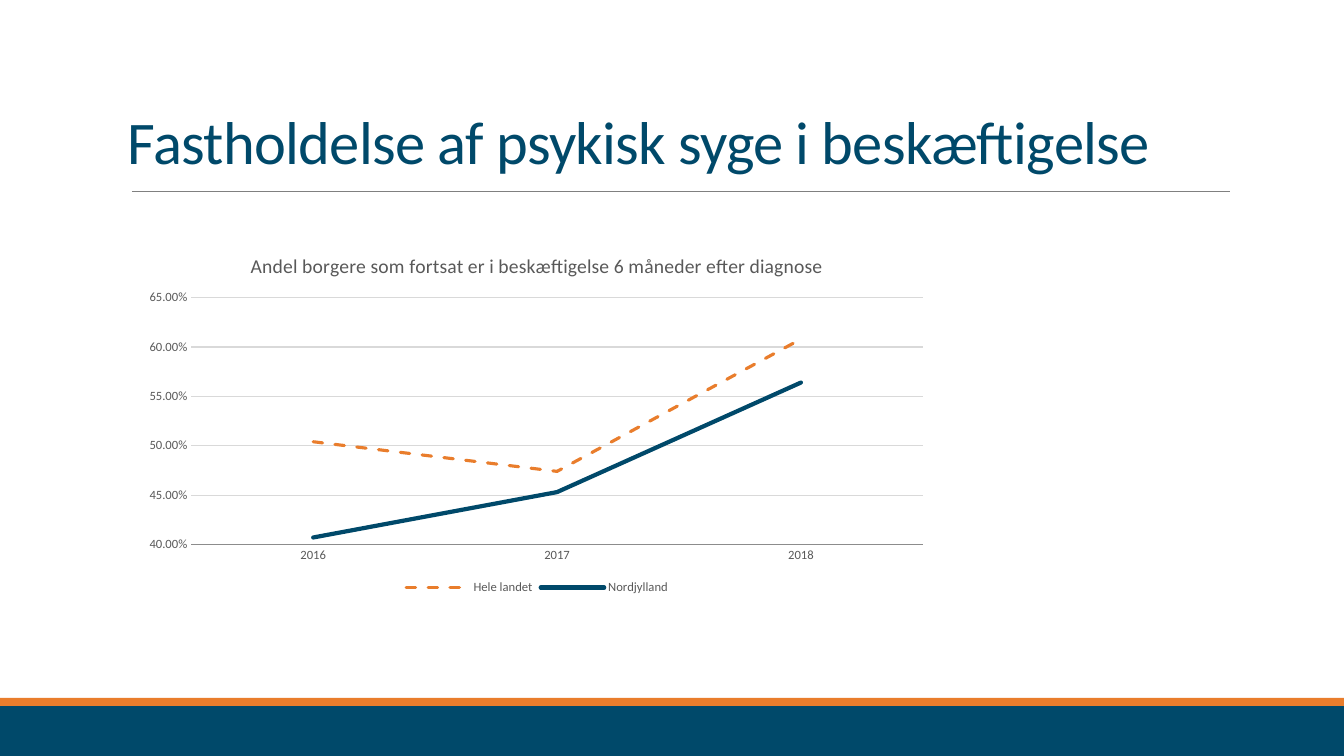
from dataclasses import dataclass

from lxml import etree
from pptx import Presentation
from pptx.chart.data import CategoryChartData
from pptx.dml.color import RGBColor
from pptx.enum.chart import XL_CHART_TYPE, XL_LEGEND_POSITION, XL_MARKER_STYLE, XL_TICK_MARK
from pptx.enum.dml import MSO_LINE
from pptx.enum.shapes import MSO_CONNECTOR, MSO_SHAPE
from pptx.enum.text import MSO_ANCHOR
from pptx.oxml.ns import qn
from pptx.util import Emu, Pt

LINE_CHART = XL_CHART_TYPE.LINE
BOTTOM = XL_LEGEND_POSITION.BOTTOM
NO_MARKER = XL_MARKER_STYLE.NONE
NO_TICK = XL_TICK_MARK.NONE
SOLID, DASH = MSO_LINE.SOLID, MSO_LINE.DASH
RECTANGLE = MSO_SHAPE.RECTANGLE
STRAIGHT = MSO_CONNECTOR.STRAIGHT
ANCHOR_BOTTOM = MSO_ANCHOR.BOTTOM

FONT = "Calibri"
SLIDE_W, SLIDE_H = 1344, 756
COLORS = {
    "navy": "00496A",
    "orange": "E97D2C",
    "rule": "808080",
    "axis": "8C8C8C",
    "grid": "D9D9D9",
    "label": "595959",
}


@dataclass(frozen=True)
class Band:
    top: int
    height: int
    color: str


@dataclass(frozen=True)
class Series:
    name: str
    values: tuple[float, ...]
    color: str
    width: float
    dash: MSO_LINE


BANDS = [Band(706, 50, "navy"), Band(698, 8, "orange")]
YEARS = ["2016", "2017", "2018"]
SERIES = [
    Series("Hele landet", (0.504, 0.474, 0.608), "orange", 2.25, DASH),
    Series("Nordjylland", (0.407, 0.453, 0.564), "navy", 3, SOLID),
]
# Inner plot area as fractions of the chart
PLOT_LAYOUT = {"x": 0.07, "y": 0.17, "w": 0.91, "h": 0.68}


def px(n: int) -> Emu:
    return Emu(round(n * 12192000 / SLIDE_W))


def rgb(name: str) -> RGBColor:
    return RGBColor.from_string(COLORS[name])


def style_font(font, *, size: float, color: str) -> None:
    font.name, font.size, font.bold = FONT, Pt(size), False
    font.color.rgb = rgb(color)


def style_line(line, *, color: str, width: float) -> None:
    line.color.rgb = rgb(color)
    line.width = Pt(width)


def add_band(s, band: Band) -> None:
    sp = s.shapes.add_shape(RECTANGLE, 0, px(band.top), px(SLIDE_W), px(band.height))
    sp.shadow.inherit = False
    sp.fill.solid()
    sp.fill.fore_color.rgb = rgb(band.color)
    sp.line.fill.background()


def add_rule(s, left: int, right: int, y: int) -> None:
    rule = s.shapes.add_connector(STRAIGHT, px(left), px(y), px(right), px(y))
    style_line(rule.line, color="rule", width=0.5)
    etree.SubElement(rule.element.spPr, qn("a:effectLst"))


def add_text(s, text: str, *, left: int, top: int, width: int, height: int,
             size: float, color: str, spacing: float, bottom_inset: int) -> None:
    tf = s.shapes.add_textbox(px(left), px(top), px(width), px(height)).text_frame
    tf.word_wrap = True
    tf.vertical_anchor = ANCHOR_BOTTOM
    tf.margin_bottom = px(bottom_inset)
    p = tf.paragraphs[0]
    p.line_spacing = 0.85
    r = p.add_run()
    r.text = text
    style_font(r.font, size=size, color=color)
    r.font.element.set("spc", str(round(spacing * 100))) if hasattr(r.font, "element") else \
        r._r.get_or_add_rPr().set("spc", str(round(spacing * 100)))


def set_plot_layout(chart) -> None:
    plot_area = chart.element.find(".//" + qn("c:plotArea"))
    layout = plot_area.find(qn("c:layout"))
    if layout is None:
        layout = etree.Element(qn("c:layout"))
        plot_area.insert(0, layout)
    manual = etree.SubElement(layout, qn("c:manualLayout"))
    settings = {"layoutTarget": "inner", "xMode": "edge", "yMode": "edge", **PLOT_LAYOUT}
    for tag, value in settings.items():
        etree.SubElement(manual, qn(f"c:{tag}")).set("val", str(value))


def add_line_chart(s, title: str, *, left: int, top: int, width: int, height: int) -> None:
    data = CategoryChartData(number_format="0.00%")
    data.categories = YEARS
    for series in SERIES:
        data.add_series(series.name, series.values)
    chart = s.shapes.add_chart(LINE_CHART, px(left), px(top), px(width), px(height), data).chart
    style_font(chart.font, size=9, color="label")

    # Chart title and legend
    chart.has_title = True
    p = chart.chart_title.text_frame.paragraphs[0]
    r = p.add_run()
    r.text = title
    style_font(r.font, size=14, color="label")
    chart.chart_title.include_in_layout = False
    chart.has_legend = True
    chart.legend.position = BOTTOM
    chart.legend.include_in_layout = False
    style_font(chart.legend.font, size=9, color="label")

    # Axes
    years, shares = chart.category_axis, chart.value_axis
    for axis in (years, shares):
        axis.major_tick_mark = axis.minor_tick_mark = NO_TICK
        style_font(axis.tick_labels.font, size=9, color="label")
    style_line(years.format.line, color="axis", width=0.75)
    shares.format.line.fill.background()
    shares.minimum_scale, shares.maximum_scale, shares.major_unit = 0.4, 0.65, 0.05
    shares.tick_labels.number_format = "0.00%"
    shares.tick_labels.number_format_is_linked = False
    style_line(shares.major_gridlines.format.line, color="grid", width=0.75)

    # Lines with round ends
    plot = chart.plots[0]
    plot.vary_by_categories = False
    for line, series in zip(plot.series, SERIES):
        line.smooth = False
        line.marker.style = NO_MARKER
        style_line(line.format.line, color=series.color, width=series.width)
        line.format.line.dash_style = series.dash
    for ln in chart.element.xpath(".//c:ser/c:spPr/a:ln"):
        ln.set("cap", "rnd")
    set_plot_layout(chart)


def main() -> None:
    prs = Presentation()
    prs.slide_width, prs.slide_height = px(SLIDE_W), px(SLIDE_H)
    s = prs.slides.add_slide(prs.slide_layouts[6])

    # Footer bands and title rule
    for band in BANDS:
        add_band(s, band)
    add_rule(s, 132, 1230, 191)

    # Title
    add_text(s, "Fastholdelse af psykisk syge i beskæftigelse", left=118, top=46, width=1109,
             height=160, size=43.2, color="navy", spacing=-0.5, bottom_inset=29)

    # Chart
    add_line_chart(s, "Andel borgere som fortsat er i beskæftigelse 6 måneder efter diagnose",
                   left=135, top=236, width=804, height=363)
    prs.save("out.pptx")


if __name__ == "__main__":
    main()
